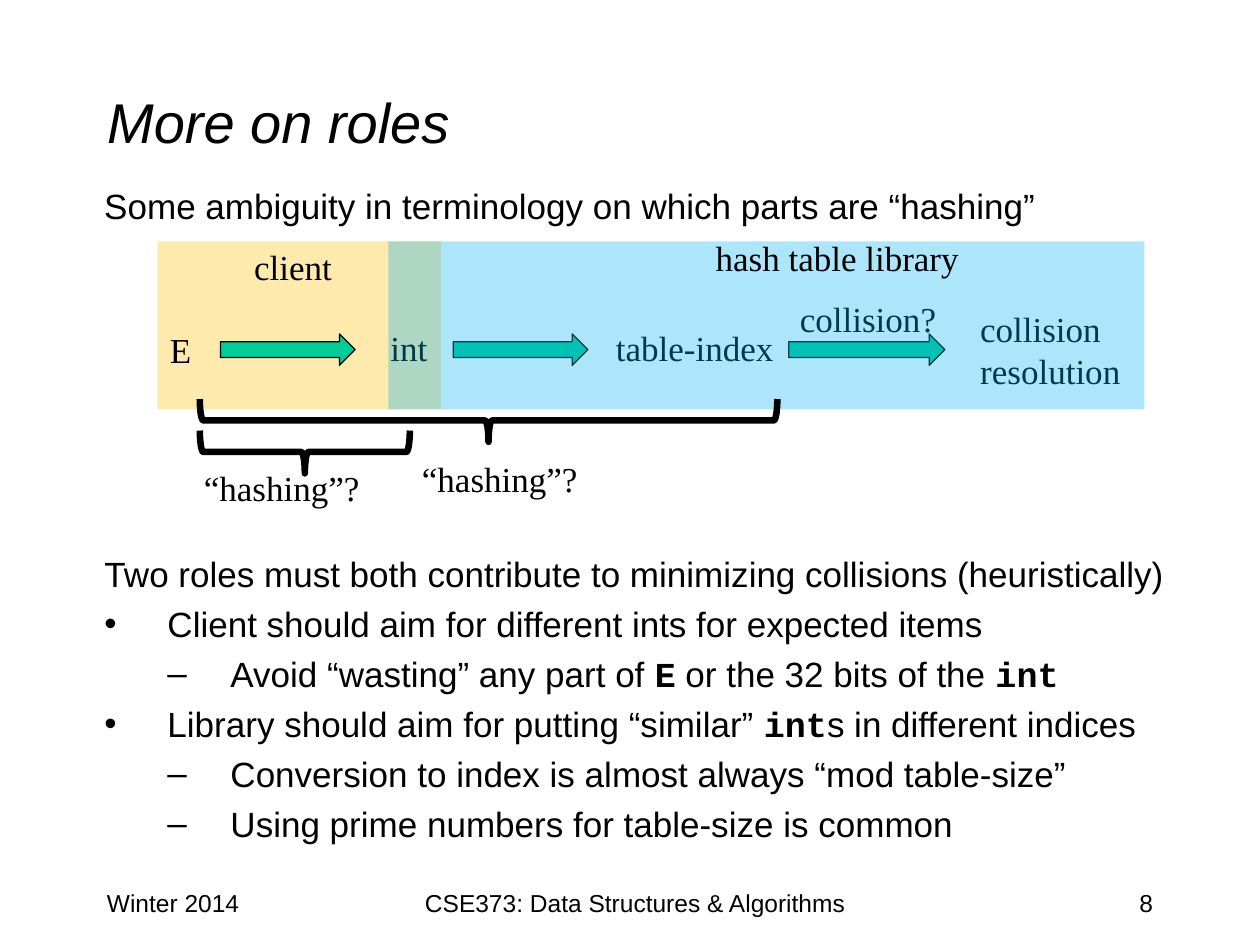
"""Build the slide on client and library roles in hashing."""
from lxml import etree
from pptx import Presentation, util as u
from pptx.dml.color import RGBColor
from pptx.enum import shapes, text
from pptx.oxml.ns import qn

BLACK = RGBColor(0, 0, 0)
GREEN = RGBColor(0x00, 0xCC, 0x99)
AMBER = RGBColor(0xFF, 0xC0, 0x00)
SKY = RGBColor(0x00, 0xB0, 0xF0)
SANS, SERIF, MONO = "Arial", "Times New Roman", "Courier New"

TITLE = "More on roles"
INTRO = "Some ambiguity in terminology on which parts are “hashing”"
POINTS = [
    (None, [("Two roles must both contribute to minimizing collisions (heuristically)", SANS)]),
    (0, [("Client should aim for different ints for expected items", SANS)]),
    (1, [("Avoid “wasting” any part of ", SANS), ("E", MONO),
         (" or the 32 bits of the ", SANS), ("int", MONO)]),
    (0, [("Library should aim for putting “similar” ", SANS), ("int", MONO),
         ("s in different indices", SANS)]),
    (1, [("Conversion to index is almost always “mod table-size”", SANS)]),
    (1, [("Using prime numbers for table-size is common", SANS)]),
]
FOOTERS = [
    ("Winter 2014", 54, 150, text.PP_ALIGN.LEFT),
    ("8", 516, 150, text.PP_ALIGN.RIGHT),
    ("CSE373: Data Structures & Algorithms", 228, 270, text.PP_ALIGN.CENTER),
]
CLIENT_ZONE = (90, 138, 162, 96)
LIBRARY_ZONE = (222, 138, 432, 96)
ARROWS = [(126, 77), (259, 77), (450.7, 89.3)]
ARROW_TOP, ARROW_HEIGHT = 190.8, 18
STEP_LABELS = [
    (["E"], 90, 184.3, 26.6),
    (["int"], 216, 182.9, 36),
    (["table-index"], 344.9, 182.9, 105.1),
    (["collision?"], 450, 166.3, 92.9),
    (["collision", "resolution"], 553, 172, 95),
    (["client"], 138.2, 136.8, 59),
]
TOP_LABELS = [
    (["hash table library"], 401.8, 131.8, 154),
    (["“hashing”?"], 109.4, 262.8, 104.4),
    (["“hashing”?"], 234, 257.8, 104.4),
]
BRACES = [(114.2, 246, 120), (114.2, 228, 330)]
BRACE_DEPTH = 24.5


def points(*lengths):
    return [u.Pt(length) for length in lengths]


def add_span(para, words, font=SANS, size=20):
    span = para.add_run()
    span.text = words
    span.font.name, span.font.size = font, u.Pt(size)
    span.font.color.rgb = BLACK
    span.font.bold = font == MONO
    return span


def place(holder, left, top, width, height):
    holder.left, holder.top, holder.width, holder.height = points(left, top, width, height)


def next_para(frame, index):
    return frame.add_paragraph() if index else frame.paragraphs[0]


def indent(para, level):
    para.space_before = u.Pt(4.6)
    props = para._p.get_or_add_pPr()
    props.set("marL", str(u.Pt(40.5 + 36 * (level or 0))))
    props.set("indent", str(u.Pt(-36)))
    if level is None:
        etree.SubElement(props, qn("a:buNone"))
    else:
        para.level = level


def add_box(page, left, top, width, height):
    box = page.shapes.add_textbox(*points(left, top, width, height))
    box.text_frame.word_wrap = True
    return box.text_frame


def add_label(page, lines, left, top, width):
    frame = add_box(page, left, top, width, 7.5 + 24 * len(lines))
    frame.word_wrap = False
    frame.auto_size = text.MSO_AUTO_SIZE.SHAPE_TO_FIT_TEXT
    for index, line in enumerate(lines):
        add_span(next_para(frame, index), line, SERIF)


def add_figure(page, kind, area, fill=None, line=None):
    figure = page.shapes.add_shape(kind, *points(*area))
    figure.shadow.inherit = False
    if fill is None:
        figure.fill.background()
    else:
        figure.fill.solid()
        figure.fill.fore_color.rgb = fill
    if line is None:
        figure.line.fill.background()
    else:
        figure.line.color.rgb = BLACK
        figure.line.width = u.Pt(line)
    return figure


def add_zone(page, area, color):
    zone = add_figure(page, shapes.MSO_SHAPE.RECTANGLE, area, color)
    tint = zone.fill._xPr.find(".//" + qn("a:srgbClr"))
    etree.SubElement(tint, qn("a:alpha"), val="32000")


def add_brace(page, left, top, span):
    shift = (span - BRACE_DEPTH) / 2
    area = (left + shift, top - shift, BRACE_DEPTH, span)
    brace = add_figure(page, shapes.MSO_SHAPE.LEFT_BRACE, area, line=3.75)
    brace.rotation = 270


def main():
    deck = Presentation()
    deck.slide_width, deck.slide_height = points(720, 540)
    page = deck.slides.add_slide(deck.slide_layouts[1])

    title, body = page.shapes.title, page.placeholders[1]
    place(title, 54, 24, 612, 90)
    title.text_frame.vertical_anchor = text.MSO_ANCHOR.MIDDLE
    heading = title.text_frame.paragraphs[0]
    heading.alignment = text.PP_ALIGN.LEFT
    add_span(heading, TITLE, size=32).font.italic = True

    place(body, 48, 312, 642, 192)
    body.text_frame.auto_size = text.MSO_AUTO_SIZE.NONE
    for index, (level, spans) in enumerate(POINTS):
        para = next_para(body.text_frame, index)
        indent(para, level)
        for words, font in spans:
            add_span(para, words, font)

    for words, left, width, align in FOOTERS:
        para = add_box(page, left, 504, width, 36).paragraphs[0]
        para.alignment = align
        add_span(para, words, size=14)

    add_zone(page, CLIENT_ZONE, AMBER)
    for left, width in ARROWS:
        area = (left, ARROW_TOP, width, ARROW_HEIGHT)
        add_figure(page, shapes.MSO_SHAPE.RIGHT_ARROW, area, GREEN, 0.75)
    for label in STEP_LABELS:
        add_label(page, *label)
    add_zone(page, LIBRARY_ZONE, SKY)

    intro = add_box(page, 48, 102, 642, 54).paragraphs[0]
    indent(intro, None)
    add_span(intro, INTRO)
    for brace in BRACES:
        add_brace(page, *brace)
    for label in TOP_LABELS:
        add_label(page, *label)

    deck.save("out.pptx")


if __name__ == "__main__":
    main()
